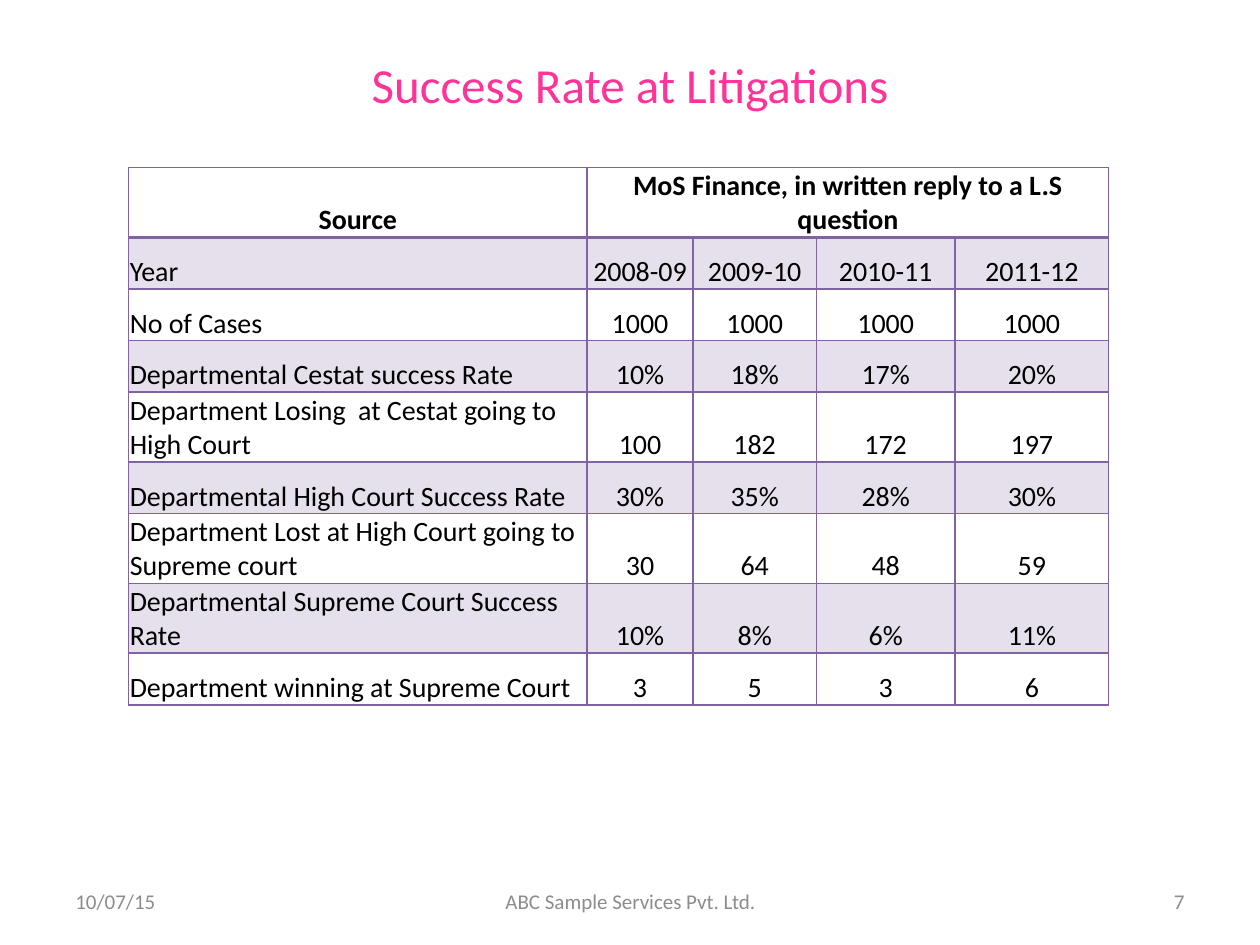
from dataclasses import dataclass

from lxml.etree import SubElement
from pptx import Presentation
from pptx.dml.color import RGBColor
from pptx.enum.text import MSO_ANCHOR as Anchor, PP_ALIGN as Align
from pptx.oxml.ns import qn
from pptx.util import Inches, Pt

FONT = "Calibri"
COLORS = {"title": "FF3399", "text": "000000", "accent": "8064A2", "footer": "8C8C8C"}
BAND_ALPHA = 20  # percent

COLUMN_WIDTHS = [3.64, 0.84, 0.98, 1.1, 1.22]
ROW_HEIGHT = 0.41
ROWS = [
    ["Source", "MoS Finance, in written reply to a L.S question", "", "", ""],
    ["Year", "2008-09", "2009-10", "2010-11", "2011-12"],
    ["No of Cases", "1000", "1000", "1000", "1000"],
    ["Departmental Cestat success Rate", "10%", "18%", "17%", "20%"],
    ["Department Losing  at Cestat going to High Court", "100", "182", "172", "197"],
    ["Departmental High Court Success Rate", "30%", "35%", "28%", "30%"],
    ["Department Lost at High Court going to Supreme court", "30", "64", "48", "59"],
    ["Departmental Supreme Court Success Rate", "10%", "8%", "6%", "11%"],
    ["Department winning at Supreme Court", "3", "5", "3", "6"],
]


@dataclass
class FooterItem:
    text: str
    left: float
    width: float
    align: Align


FOOTER = [
    FooterItem("10/07/15", 0.5, 2.33, Align.LEFT),
    FooterItem("ABC Sample Services Pvt. Ltd.", 3.42, 3.17, Align.CENTER),
    FooterItem("7", 7.17, 2.33, Align.RIGHT),
]


def write(frame, text: str, size: int, color: str, align: Align, bold: bool = False) -> None:
    para = frame.paragraphs[0]
    para.alignment = align
    span = para.add_run()
    span.text = text
    span.font.name = FONT
    span.font.size = Pt(size)
    span.font.bold = bold
    span.font.color.rgb = RGBColor.from_string(COLORS[color])


def set_borders(cell, top: float, bottom: float) -> None:
    props = cell._tc.get_or_add_tcPr()
    for side, points in {"L": 1, "R": 1, "T": top, "B": bottom}.items():
        line = SubElement(props, qn(f"a:ln{side}"), w=str(Pt(points)))
        fill = SubElement(line, qn("a:solidFill"))
        SubElement(fill, qn("a:srgbClr"), val=COLORS["accent"])


def fill_band(cell) -> None:
    cell.fill.solid()
    cell.fill.fore_color.rgb = RGBColor.from_string(COLORS["accent"])
    color = cell._tc.tcPr.find(qn("a:solidFill")).find(qn("a:srgbClr"))
    SubElement(color, qn("a:alpha"), val=str(BAND_ALPHA * 1000))


def format_cell(cell, row: int, column: int) -> None:
    cell.vertical_anchor = Anchor.BOTTOM
    cell.margin_left = cell.margin_right = cell.margin_top = Inches(0.01)
    cell.margin_bottom = 0
    # The rule under the header row is heavier
    set_borders(cell, top=2 if row == 1 else 1, bottom=2 if row == 0 else 1)
    if row % 2:
        fill_band(cell)
    else:
        cell.fill.background()
    if ROWS[row][column]:
        align = Align.LEFT if row and column == 0 else Align.CENTER
        write(cell.text_frame, ROWS[row][column], 16, "text", align, bold=row == 0)


def add_rate_table(page) -> None:
    height = ROW_HEIGHT * len(ROWS)
    frame = page.shapes.add_table(
        len(ROWS), len(COLUMN_WIDTHS), Inches(1.02), Inches(1.33),
        Inches(sum(COLUMN_WIDTHS)), Inches(height))
    table = frame.table
    table.first_row = table.horz_banding = False
    for column, width in zip(table.columns, COLUMN_WIDTHS):
        column.width = Inches(width)
    for row in table.rows:
        row.height = Inches(ROW_HEIGHT)
    table.cell(0, 1).merge(table.cell(0, 4))
    for row in range(len(ROWS)):
        for column in range(len(COLUMN_WIDTHS)):
            format_cell(table.cell(row, column), row, column)


def add_footer_item(page, item: FooterItem) -> None:
    box = page.shapes.add_textbox(
        Inches(item.left), Inches(6.95), Inches(item.width), Inches(0.4))
    box.text_frame.word_wrap = True
    box.text_frame.vertical_anchor = Anchor.MIDDLE
    write(box.text_frame, item.text, 12, "footer", item.align)


def main() -> None:
    deck = Presentation()
    deck.slide_width, deck.slide_height = Inches(10), Inches(7.5)
    page = deck.slides.add_slide(deck.slide_layouts[5])

    # Title
    title = page.shapes.title
    title.left, title.top = Inches(0.5), Inches(0.33)
    title.width, title.height = Inches(9), Inches(0.67)
    title.text_frame.vertical_anchor = Anchor.MIDDLE
    write(title.text_frame, "Success Rate at Litigations", 28, "title", Align.CENTER)

    # Table and footer
    add_rate_table(page)
    for item in FOOTER:
        add_footer_item(page, item)

    deck.save("out.pptx")


if __name__ == "__main__":
    main()
